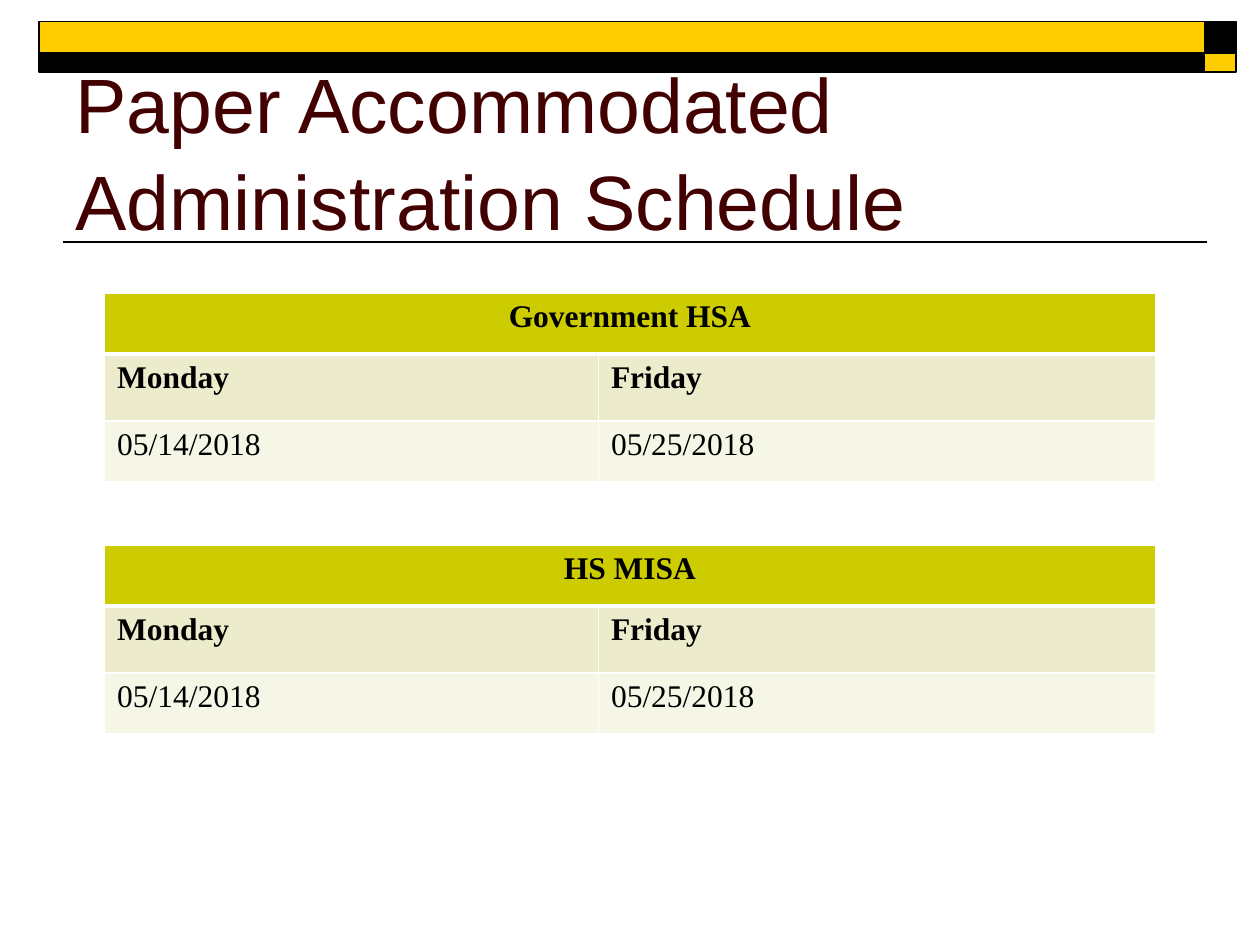
from dataclasses import dataclass

from lxml import etree
from pptx import Presentation
from pptx import util as u
from pptx.dml.color import RGBColor
from pptx.enum import shapes, text
from pptx.oxml.ns import qn


@dataclass(frozen=True)
class Theme:
    black: str = "000000"
    white: str = "FFFFFF"
    gold: str = "FFCC00"
    maroon: str = "420000"
    head: str = "CCCC00"
    label: str = "ECECCC"
    date: str = "F6F6E7"
    title_font: str = "Arial"
    cell_font: str = "Times New Roman"
    title_size: int = 44
    cell_size: int = 18


THEME = Theme()


def rgb(code):
    return RGBColor.from_string(code)


def style(para, name, size, color, bold=False):
    font = para.font
    font.name, font.size, font.bold = name, u.Pt(size), bold
    font.color.rgb = rgb(color)


def add_bar(slide, left, top, width, height, color):
    box = [u.Inches(n) for n in (left, top, width, height)]
    bar = slide.shapes.add_shape(shapes.MSO_SHAPE.RECTANGLE, *box)
    bar.shadow.inherit = False
    bar.fill.solid()
    bar.fill.fore_color.rgb = rgb(color)
    bar.line.color.rgb = rgb(THEME.black)
    bar.line.width = u.Pt(1)


def add_rule(slide, left, right, top):
    rule = slide.shapes.add_connector(
        shapes.MSO_CONNECTOR.STRAIGHT,
        u.Inches(left), u.Inches(top), u.Inches(right), u.Inches(top))
    rule.line.color.rgb = rgb(THEME.black)
    rule.line.width = u.Pt(1)
    etree.SubElement(rule.element.spPr, qn("a:effectLst"))


def add_banner(slide):
    left, split, top = 0.31, 9.56, 0.17
    long, short = split - left, 0.25
    add_rule(slide, 0.5, 9.58, 1.92)
    add_bar(slide, split, top, short, 0.25, THEME.black)
    add_bar(slide, left, top, long, 0.25, THEME.gold)
    add_bar(slide, left, top + 0.25, long, 0.15, THEME.black)
    add_bar(slide, split, top + 0.25, short, 0.15, THEME.gold)


def set_title(slide, words):
    title = slide.shapes.title
    title.left, title.top = u.Inches(0.5), u.Inches(0.58)
    title.width, title.height = u.Inches(9), u.Inches(1.42)
    frame = title.text_frame
    frame.text = words
    frame.word_wrap = True
    frame.auto_size = text.MSO_AUTO_SIZE.NONE
    frame.vertical_anchor = text.MSO_ANCHOR.BOTTOM
    para = frame.paragraphs[0]
    para.alignment = text.PP_ALIGN.LEFT
    para.line_spacing = 1.05
    style(para, THEME.title_font, THEME.title_size, THEME.maroon)


def add_edges(cell, top, bottom):
    props = cell._tc.get_or_add_tcPr()
    for side, width in zip("LRTB", (1, 1, top, bottom)):
        edge = etree.SubElement(props, qn(f"a:ln{side}"), w=str(u.Pt(width)))
        fill = etree.SubElement(edge, qn("a:solidFill"))
        etree.SubElement(fill, qn("a:srgbClr"), val=THEME.white)


def add_dates(slide, top, rows):
    widths, heights = (3.92, 4.42), (0.48, 0.53, 0.48)
    table = slide.shapes.add_table(
        len(rows), len(widths), u.Inches(0.83), u.Inches(top),
        u.Inches(sum(widths)), u.Inches(sum(heights))).table
    for col, width in zip(table.columns, widths):
        col.width = u.Inches(width)
    for row, height in zip(table.rows, heights):
        row.height = u.Inches(height)
    table.cell(0, 0).merge(table.cell(0, 1))
    fills = (THEME.head, THEME.label, THEME.date)
    edges = ((1, 3), (3, 1), (1, 1))
    for r, words in enumerate(rows):
        for c in range(len(widths)):
            cell = table.cell(r, c)
            add_edges(cell, *edges[r])
            cell.fill.solid()
            cell.fill.fore_color.rgb = rgb(fills[r])
            if c < len(words):
                cell.text = words[c]
                para = cell.text_frame.paragraphs[0]
                style(para, THEME.cell_font, THEME.cell_size, THEME.black, r < 2)
    heading = table.cell(0, 0).text_frame.paragraphs[0]
    heading.alignment = text.PP_ALIGN.CENTER


def main():
    deck = Presentation()
    deck.slide_width, deck.slide_height = u.Inches(10), u.Inches(7.5)
    slide = deck.slides.add_slide(deck.slide_layouts[5])
    add_banner(slide)
    set_title(slide, "Paper Accommodated Administration Schedule")
    days, dates = ("Monday", "Friday"), ("05/14/2018", "05/25/2018")
    for i, name in enumerate(("Government HSA", "HS MISA")):
        add_dates(slide, 2.33 + 2 * i, ((name,), days, dates))
    deck.save("out.pptx")


if __name__ == "__main__":
    main()
